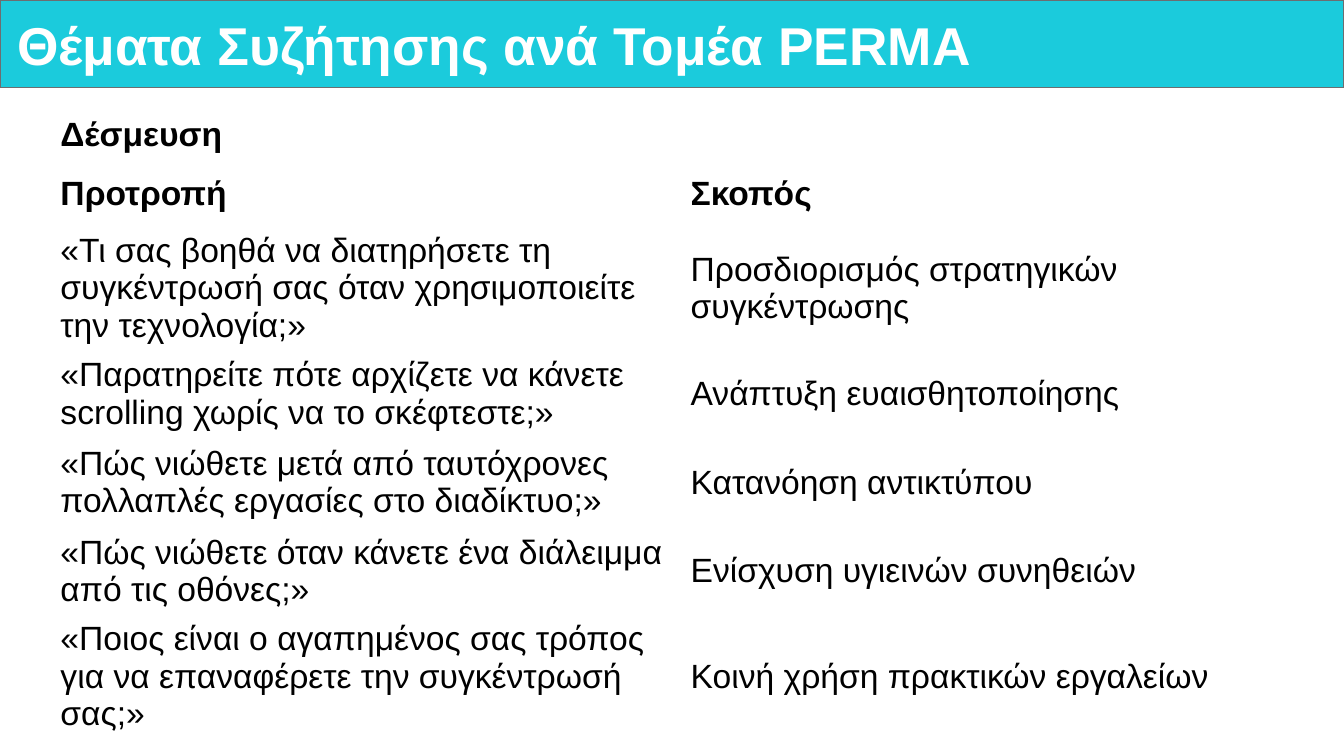
from dataclasses import dataclass

from pptx import Presentation
from pptx.dml.color import RGBColor
from pptx.enum.shapes import MSO_SHAPE
from pptx.enum.text import MSO_ANCHOR, MSO_AUTO_SIZE, PP_ALIGN
from pptx.slide import Slide
from pptx.text.text import TextFrame
from pptx.util import Inches, Pt

COLORS = {"banner": "1BCBDC", "edge": "6C6E70", "title": "FFFFFF", "text": "000000"}


@dataclass
class Row:
    prompt: str
    goal: str
    height: float = 0.88
    bold: bool = False


ROWS = [
    Row("Προτροπή", "Σκοπός", 0.66, True),
    Row("«Τι σας βοηθά να διατηρήσετε τη συγκέντρωσή σας όταν χρησιμοποιείτε την τεχνολογία;»",
        "Προσδιορισμός στρατηγικών συγκέντρωσης"),
    Row("«Παρατηρείτε πότε αρχίζετε να κάνετε scrolling χωρίς να το σκέφτεστε;»",
        "Ανάπτυξη ευαισθητοποίησης"),
    Row("«Πώς νιώθετε μετά από ταυτόχρονες πολλαπλές εργασίες στο διαδίκτυο;»",
        "Κατανόηση αντικτύπου"),
    Row("«Πώς νιώθετε όταν κάνετε ένα διάλειμμα από τις οθόνες;»",
        "Ενίσχυση υγιεινών συνηθειών"),
    Row("«Ποιος είναι ο αγαπημένος σας τρόπος για να επαναφέρετε την συγκέντρωσή σας;»",
        "Κοινή χρήση πρακτικών εργαλείων"),
]


def color(name: str) -> RGBColor:
    return RGBColor.from_string(COLORS[name])


def write(frame: TextFrame, text: str, size: int = 24, bold: bool = False, tint: str = "text") -> None:
    frame.text = text
    frame.word_wrap = True
    line = frame.paragraphs[0]
    line.alignment = PP_ALIGN.LEFT
    font = line.runs[0].font
    font.name = "Arial"
    font.size = Pt(size)
    font.bold = bold
    font.color.rgb = color(tint)


def add_title(slide: Slide) -> None:
    banner = slide.shapes.add_shape(MSO_SHAPE.RECTANGLE, 0, 0, Inches(13.33), Inches(0.87))
    banner.shadow.inherit = False
    banner.fill.solid()
    banner.fill.fore_color.rgb = color("banner")
    banner.line.color.rgb = color("edge")
    banner.line.width = Pt(1)
    title = slide.shapes.title
    title.element.addprevious(banner.element)
    title.left, title.top = Inches(0.11), Inches(0.09)
    title.width, title.height = Inches(13.06), Inches(0.78)
    frame = title.text_frame
    write(frame, "Θέματα Συζήτησης ανά Τομέα PERMA", 38, True, "title")
    frame.auto_size = MSO_AUTO_SIZE.NONE
    frame.vertical_anchor = MSO_ANCHOR.MIDDLE
    frame.margin_left = frame.margin_right = Inches(0.06)
    frame.margin_top = frame.margin_bottom = Inches(0.06)
    frame.paragraphs[0].line_spacing = 0.9


def add_topic(slide: Slide) -> None:
    topic = slide.shapes.add_textbox(Inches(0.5), Inches(1.07), Inches(6.76), Inches(0.5))
    write(topic.text_frame, "Δέσμευση", bold=True)
    topic.text_frame.auto_size = MSO_AUTO_SIZE.SHAPE_TO_FIT_TEXT


def add_grid(slide: Slide, rows: list[Row]) -> None:
    total = sum(row.height for row in rows)
    table = slide.shapes.add_table(
        len(rows), 2, Inches(0.5), Inches(1.59), Inches(12.5), Inches(total)).table
    table.first_row = False
    table.horz_banding = False
    for column in table.columns:
        column.width = Inches(6.25)
    for place, row in enumerate(rows):
        table.rows[place].height = Inches(row.height)
        for cell, text in zip(table.rows[place].cells, (row.prompt, row.goal)):
            cell.fill.background()
            cell.vertical_anchor = MSO_ANCHOR.MIDDLE
            write(cell.text_frame, text, bold=row.bold)


def main() -> None:
    deck = Presentation()
    deck.slide_width, deck.slide_height = Inches(13.33), Inches(7.5)
    slide = deck.slides.add_slide(deck.slide_layouts[5])
    add_title(slide)
    add_grid(slide, ROWS)
    add_topic(slide)
    deck.save("out.pptx")


if __name__ == "__main__":
    main()
